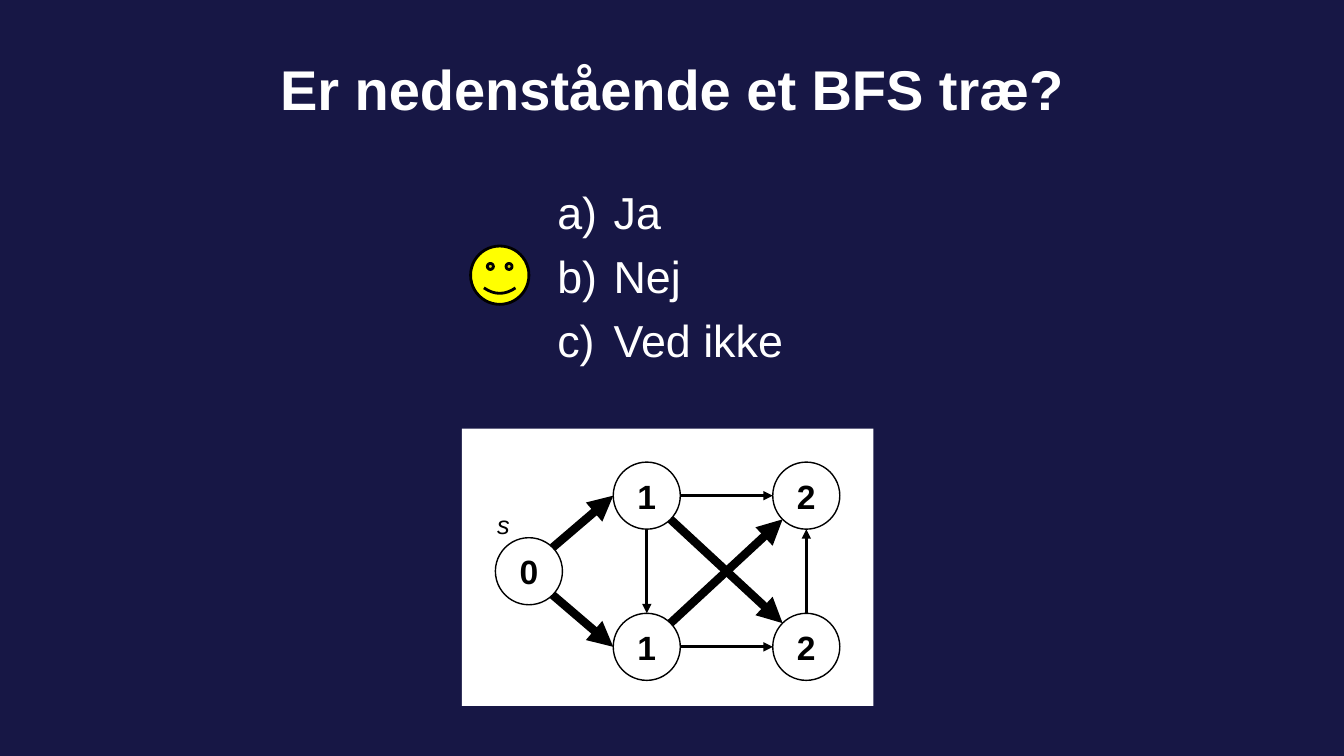
import math

import pptx
import pptx.util
import pptx.dml.color
import pptx.enum.shapes
import pptx.enum.text
import pptx.oxml
import pptx.oxml.ns

Cm, Pt = pptx.util.Cm, pptx.util.Pt
MSO = pptx.enum.shapes.MSO_SHAPE
ALIGN = pptx.enum.text.PP_ALIGN
ANCHOR = pptx.enum.text.MSO_ANCHOR
COLORS = {"bg": "171745", "white": "FFFFFF", "black": "000000", "smiley": "FFFF00"}
NODE = 1.69
ANGLES = {"E": 0, "SE": 45, "S": 90, "SW": 135, "W": 180, "NW": 225, "N": 270, "NE": 315}


def rgb(name):
    """Return the named colour."""
    return pptx.dml.color.RGBColor.from_string(COLORS[name])


def add_xml(parent, xml):
    """Append a DrawingML element to parent."""
    parent.append(pptx.oxml.parse_xml(xml.replace("/>", f' {pptx.oxml.ns.nsdecls("a")}/>')))


def place(sp, left, top, width, height):
    """Put a shape in a box given in centimetres."""
    sp.left, sp.top, sp.width, sp.height = Cm(left), Cm(top), Cm(width), Cm(height)


def write(p, text, size=32, color="white", bold=False, italic=False, align=ALIGN.LEFT):
    """Write one formatted run into a paragraph."""
    p.alignment = align
    r = p.add_run()
    r.text = text
    r.font.name, r.font.size = "Arial", Pt(size)
    r.font.bold, r.font.italic = bold, italic
    r.font.color.rgb = rgb(color)


def add_shape(shapes, kind, left, top, width, height, fill, line=0):
    """Add a filled preset shape, outlined in black if line is given."""
    sp = shapes.add_shape(kind, Cm(left), Cm(top), Cm(width), Cm(height))
    sp.shadow.inherit = False
    sp.fill.solid()
    sp.fill.fore_color.rgb = rgb(fill)
    if line:
        sp.line.color.rgb = rgb("black")
        sp.line.width = Pt(line)
    else:
        sp.line.fill.background()
    return sp


def add_arrow(shapes, start, end, width):
    """Add a straight black arrow between two points."""
    cn = shapes.add_connector(pptx.enum.shapes.MSO_CONNECTOR.STRAIGHT,
                              *(Cm(v) for v in (*start, *end)))
    cn.line.color.rgb = rgb("black")
    cn.line.width = Pt(width)
    add_xml(cn.line._get_or_add_ln(), '<a:tailEnd type="triangle"/>')
    add_xml(cn._element.spPr, "<a:effectLst/>")


def add_title(s, text, left, top, width, height):
    """Fill the title placeholder."""
    sp = s.shapes.title
    place(sp, left, top, width, height)
    sp.text_frame.vertical_anchor = ANCHOR.MIDDLE
    write(sp.text_frame.paragraphs[0], text, size=40, bold=True, align=ALIGN.CENTER)


def add_answers(s, answers, left, top, width, height):
    """Fill the body placeholder with lettered answers."""
    sp = s.placeholders[1]
    place(sp, left, top, width, height)
    tf = sp.text_frame
    tf.auto_size = pptx.enum.text.MSO_AUTO_SIZE.NONE
    tf.vertical_anchor = ANCHOR.TOP
    for i, answer in enumerate(answers):
        p = tf.add_paragraph() if i else tf.paragraphs[0]
        write(p, answer)
        p.space_before = Pt(7.5)
        pPr = p._p.get_or_add_pPr()
        pPr.set("marL", str(Cm(1.42)))
        pPr.set("indent", str(-Cm(1.42)))
        add_xml(pPr, '<a:buFont typeface="Arial"/>')
        add_xml(pPr, '<a:buAutoNum type="alphaLcParenR"/>')


def add_graph(s, left, top, width, height):
    """Draw the graph with its tree edges in bold on a white panel."""
    shapes = s.shapes.add_group_shape().shapes
    add_shape(shapes, MSO.RECTANGLE, left, top, width, height, "white")
    x_source, x_mid, x_far = left + 1.69, left + 4.66, left + 8.68
    y_top, y_bottom = top + 1.69, top + 5.5
    nodes = {"source": (x_source, (y_top + y_bottom) / 2, "0"),
             "upper": (x_mid, y_top, "1"), "lower": (x_mid, y_bottom, "1"),
             "upper far": (x_far, y_top, "2"), "lower far": (x_far, y_bottom, "2")}
    edges = [("source", "NE", "upper", "W", 6), ("source", "SE", "lower", "W", 6),
             ("upper", "E", "upper far", "W", 2.25), ("lower", "E", "lower far", "W", 2.25),
             ("lower", "NE", "upper far", "SW", 6), ("lower far", "N", "upper far", "S", 2.25),
             ("upper", "SE", "lower far", "NW", 6), ("upper", "S", "lower", "N", 2.25)]

    def site(node, side):
        """Return the point on a node's rim at a compass side."""
        x, y, _ = nodes[node]
        angle = math.radians(ANGLES[side])
        return x + NODE / 2 * math.cos(angle), y + NODE / 2 * math.sin(angle)

    for x, y, level in nodes.values():
        sp = add_shape(shapes, MSO.OVAL, x - NODE / 2, y - NODE / 2, NODE, NODE, "white", 1)
        tf = sp.text_frame
        tf.word_wrap = False
        tf.vertical_anchor = ANCHOR.MIDDLE
        write(tf.paragraphs[0], level, size=24, color="black", bold=True, align=ALIGN.CENTER)
    for tail, tail_side, head, head_side, weight in edges:
        add_arrow(shapes, site(tail, tail_side), site(head, head_side), weight)
    tb = shapes.add_textbox(Cm(left + 0.64), Cm(top + 1.9), Cm(1.27), Cm(1.02))
    tb.text_frame.word_wrap = True
    write(tb.text_frame.paragraphs[0], "s", size=18, color="black", italic=True)


def main():
    """Build the quiz slide and save it."""
    prs = pptx.Presentation()
    prs.slide_width, prs.slide_height = Cm(33.87), Cm(19.05)
    s = prs.slides.add_slide(prs.slide_layouts[1])
    s.background.fill.solid()
    s.background.fill.fore_color.rgb = rgb("bg")
    add_title(s, "Er nedenstående et BFS træ?", 4.23, 0.43, 25.4, 3.6)
    add_shape(s.shapes, MSO.SMILEY_FACE, 11.86, 6.2, 1.47, 1.47, "smiley", 2)
    add_answers(s, ["Ja", "Nej", "Ved ikke"], 13.79, 4.52, 6.93, 5.28)
    add_graph(s, 11.64, 10.8, 10.37, 6.99)
    prs.save("out.pptx")


if __name__ == "__main__":
    main()
